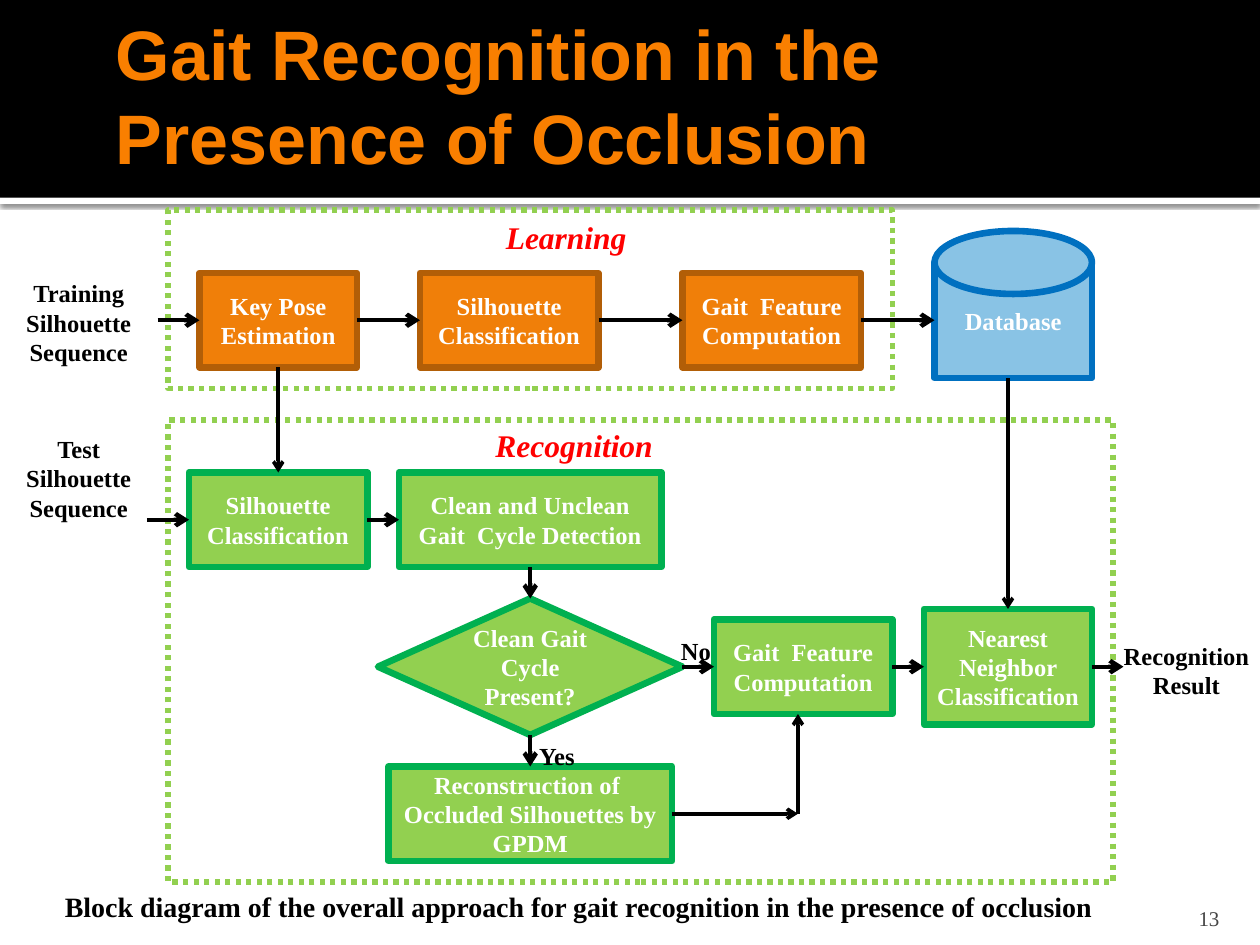
from lxml import etree
from pptx import Presentation
from pptx.dml.color import RGBColor
from pptx.enum.dml import MSO_LINE
from pptx.enum.shapes import MSO_CONNECTOR, MSO_SHAPE
from pptx.enum.text import MSO_ANCHOR, MSO_AUTO_SIZE, PP_ALIGN
from pptx.oxml.ns import qn
from pptx.util import Pt

RECT, ELLIPSE = MSO_SHAPE.RECTANGLE, MSO_SHAPE.OVAL
DECISION, PROCESS = MSO_SHAPE.FLOWCHART_DECISION, MSO_SHAPE.FLOWCHART_PROCESS
LEFT, CENTER, RIGHT = PP_ALIGN.LEFT, PP_ALIGN.CENTER, PP_ALIGN.RIGHT
TOP, MIDDLE, BOTTOM = MSO_ANCHOR.TOP, MSO_ANCHOR.MIDDLE, MSO_ANCHOR.BOTTOM
N, W, S, E = range(4)
INSETS = (7.2, 3.6, 7.2, 3.6)
FLUSH = (0, 0, 0, 0)
FONT = "Times New Roman"

ORANGE, BLUE, GREEN = ("F07F09", "B25E07"), ("89C3E5", "0070C0"), ("92D050", "00B050")

TITLE = "Gait Recognition in the Presence of Occlusion"
BOXES = {
    "key pose": ("Key Pose Estimation", RECT, ORANGE, (114, 156, 90, 54)),
    "train class": ("Silhouette Classification", RECT, ORANGE, (240, 156, 102, 54)),
    "train feature": ("Gait  Feature Computation", RECT, ORANGE, (390, 156, 102, 54)),
    "database": ("Database", RECT, BLUE, (534, 150, 90, 66)),
    "database lid": ("", ELLIPSE, BLUE, (534, 132, 90, 36)),
    "test class": ("Silhouette Classification", RECT, GREEN, (108, 270, 102, 54)),
    "detection": ("Clean and Unclean Gait  Cycle Detection", RECT, GREEN, (228, 270, 150, 54)),
    "decision": ("Clean Gait Cycle Present?", DECISION, GREEN, (216, 342, 174, 78)),
    "rebuild": ("Reconstruction of  Occluded Silhouettes by GPDM", PROCESS, GREEN,
                (222, 438, 162, 54)),
    "test feature": ("Gait  Feature Computation", RECT, GREEN, (408, 354, 102, 54)),
    "neighbor": ("Nearest Neighbor Classification", RECT, GREEN, (528, 348, 96, 66)),
}
FRAMES = [(96, 120, 414, 102), (96, 240, 540, 264)]
ARROWS = [
    ((90, 183), ("key pose", W), 2.5),
    (("key pose", E), ("train class", W), 2.5),
    (("train class", E), ("train feature", W), 2.5),
    (("train feature", E), ("database", W), 2.5),
    ((84, 297), ("test class", W), 2.5),
    (("test class", E), ("detection", W), 2.5),
    (("detection", S), ("decision", N), 2.5),
    (("decision", S), ("rebuild", N), 2.5),
    (("decision", E), ("test feature", W), 2.5),
    (("test feature", E), ("neighbor", W), 2.5),
    (("neighbor", E), (642, 381), 2.5),
    (("rebuild", E), (456, 465), 2),
    ((456, 465), (456, 408), 2),
    ((576, 216), ("neighbor", N), 2),
    (("key pose", S), ("test class", N), 2),
]
SIDE = dict(align=CENTER, insets=FLUSH)
TAG = dict(wrap=False)
HEADING = dict(size=18, color="FF0000", italic=True, wrap=False)
LABELS = [
    ("Training Silhouette Sequence", (0, 159, 90, 51), SIDE),
    ("Test Silhouette Sequence", (6, 248, 78, 51), SIDE),
    ("Recognition Result", (642, 366, 72, 34), SIDE),
    ("No", (382, 360, 32, 24.5), TAG),
    ("Yes", (301, 420, 35, 24.5), TAG),
    ("Learning", (282, 121, 86, 29), HEADING),
    ("Recognition", (276, 240, 107, 29), HEADING),
    ("Block diagram of the overall approach for gait recognition in the presence of occlusion",
     (30, 505, 660, 27), dict(size=16)),
    ("13", (646, 510, 58, 21.6), dict(size=12, color="454545", bold=False, align=RIGHT,
                                      anchor=BOTTOM, insets=(7.2, 3.6, 7.2, 0))),
]


def rgb(value):
    return RGBColor.from_string(value)


def pts(values):
    return [Pt(v) for v in values]


def write(shape, text, size=14, color="000000", bold=True, italic=False, font=FONT,
          align=LEFT, anchor=TOP, insets=INSETS, wrap=True):
    tf = shape.text_frame
    tf.auto_size = MSO_AUTO_SIZE.NONE
    tf.word_wrap = wrap
    tf.vertical_anchor = anchor
    tf.margin_left, tf.margin_top, tf.margin_right, tf.margin_bottom = pts(insets)
    p = tf.paragraphs[0]
    p.alignment = align
    r = p.add_run()
    r.text = text
    r.font.name, r.font.size = font, Pt(size)
    r.font.bold, r.font.italic = bold, italic
    r.font.color.rgb = rgb(color)


def add_box(kind, at, fill=None, line=None, width=3.78):
    sp = s.shapes.add_shape(kind, *pts(at))
    sp.shadow.inherit = False
    if fill:
        sp.fill.solid()
        sp.fill.fore_color.rgb = rgb(fill)
    else:
        sp.fill.background()
    if line:
        sp.line.color.rgb = rgb(line)
        sp.line.width = Pt(width)
    else:
        sp.line.fill.background()
    return sp


def add_shadow(sp, color, alpha, blur, dist, angle):
    effects = sp.element.spPr.find(qn("a:effectLst"))
    shadow = etree.SubElement(effects, qn("a:outerShdw"), blurRad=str(Pt(blur)),
                              dist=str(Pt(dist)), dir=str(angle * 60000), rotWithShape="0")
    clr = etree.SubElement(shadow, qn("a:srgbClr"), val=color)
    etree.SubElement(clr, qn("a:alpha"), val=str(alpha * 1000))


def locate(end):
    if end[0] not in BOXES:
        return end
    x, y, w, h = BOXES[end[0]][3]
    return [(x + w / 2, y), (x, y + h / 2), (x + w / 2, y + h), (x + w, y + h / 2)][end[1]]


def add_arrow(start, end, width):
    c = s.shapes.add_connector(MSO_CONNECTOR.STRAIGHT, *pts([*locate(start), *locate(end)]))
    if start[0] in boxes:
        c.begin_connect(boxes[start[0]], start[1])
    if end[0] in boxes:
        c.end_connect(boxes[end[0]], end[1])
    c.line.color.rgb = rgb("000000")
    c.line.width = Pt(width)
    etree.SubElement(c.line._get_or_add_ln(), qn("a:tailEnd"), type="arrow")
    etree.SubElement(c.element.spPr, qn("a:effectLst"))


prs = Presentation()
prs.slide_width, prs.slide_height = Pt(720), Pt(540)
s = prs.slides.add_slide(prs.slide_layouts[5])

rule = add_box(RECT, (0, 113, 720, 3.6), "FFFFFF")
add_shadow(rule, "000000", 60, 2.5, 0.8, 90)
band = add_box(RECT, (0, 0, 720, 113), "000000")

title = s.shapes.title
title.left, title.top, title.width, title.height = pts((59, 18, 631.5, 72))
write(title, TITLE, size=40, color="F97F00", font="Arial", anchor=MIDDLE,
      insets=(7.2, 3.6, 3.6, 3.6))
band.element.addnext(title.element)

boxes = {}
for name, (text, kind, (fill, line), at) in BOXES.items():
    boxes[name] = add_box(kind, at, fill, line)
    if text:
        write(boxes[name], text, color="FFFFFF", align=CENTER, anchor=MIDDLE,
              insets=FLUSH if kind == DECISION else INSETS)

for at in FRAMES:
    add_box(RECT, at, line="92D050", width=3).line.dash_style = MSO_LINE.ROUND_DOT

for arrow in ARROWS:
    add_arrow(*arrow)

for text, at, style in LABELS:
    write(s.shapes.add_textbox(*pts(at)), text, **style)

prs.save("out.pptx")
